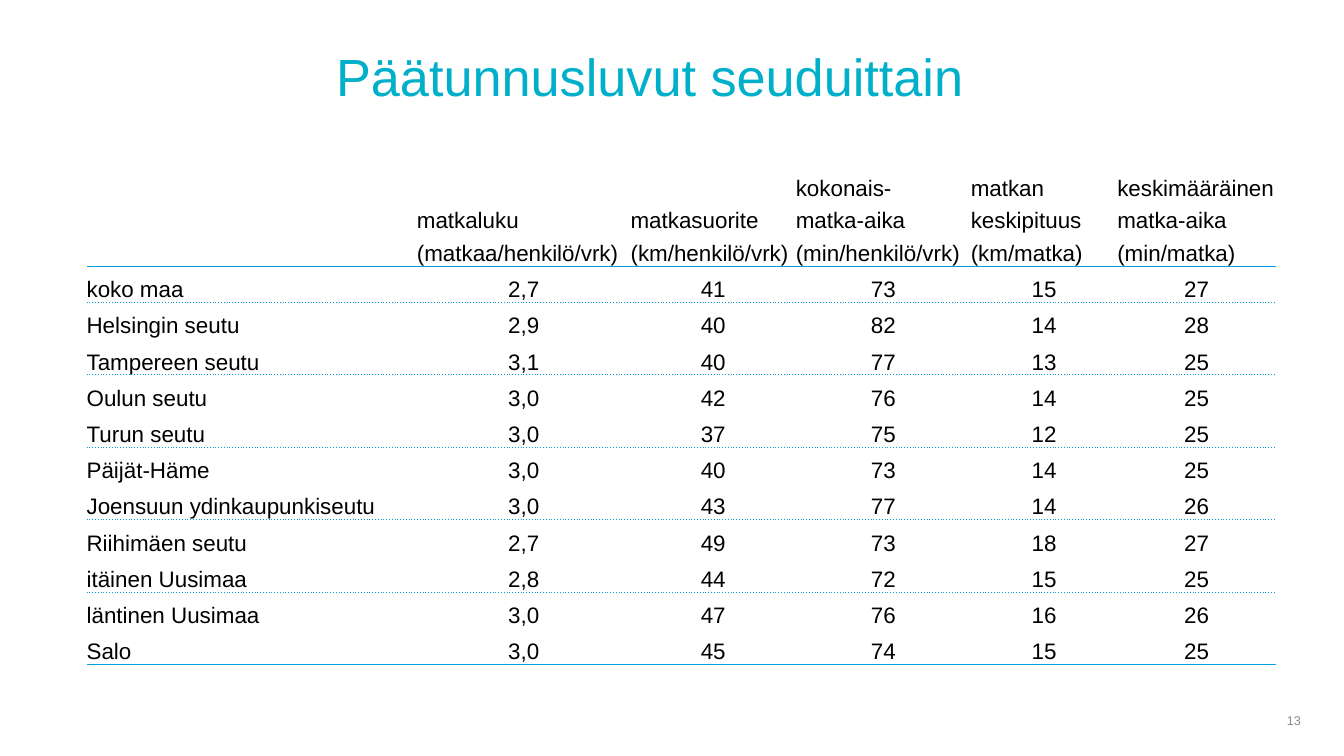
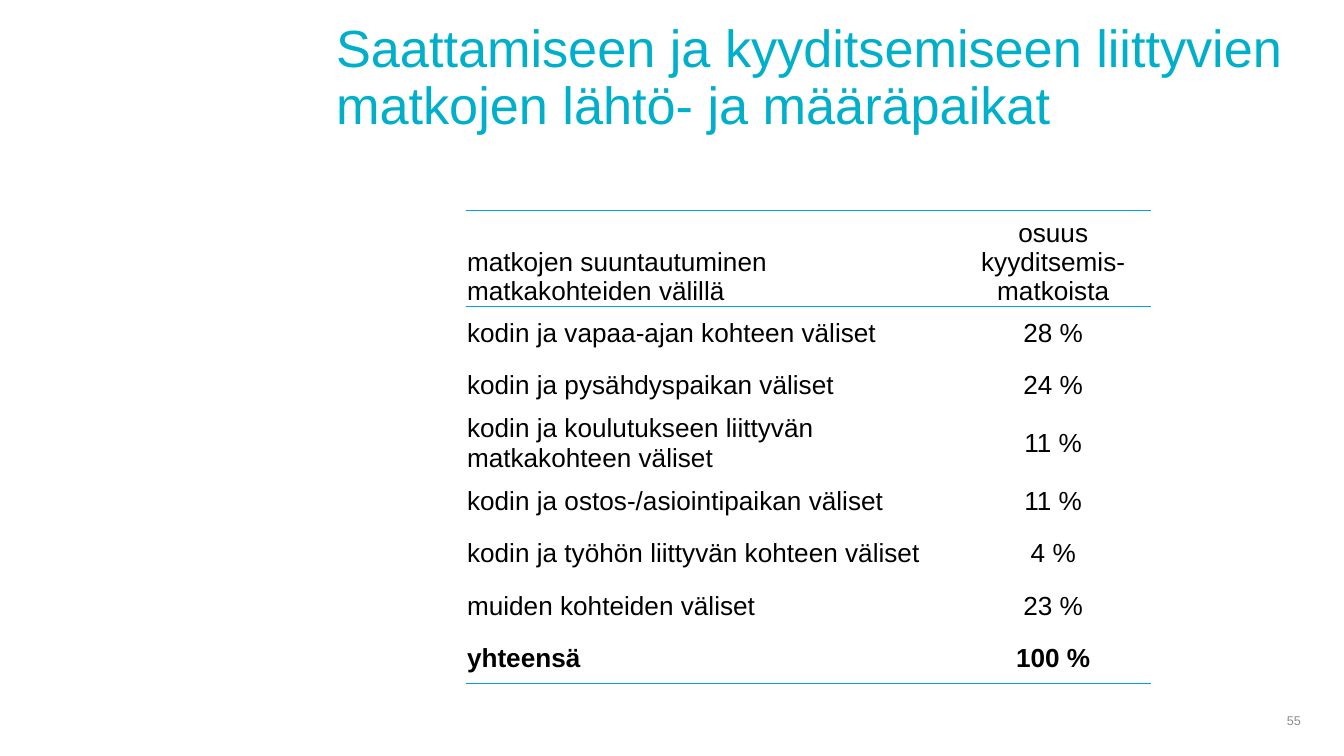
from dataclasses import dataclass

from lxml import etree
from pptx import Presentation
from pptx.dml.color import RGBColor
from pptx.enum.text import MSO_ANCHOR, PP_ALIGN
from pptx.oxml.ns import qn
from pptx.util import Pt

LEFT, MID, RIGHT = PP_ALIGN.LEFT, PP_ALIGN.CENTER, PP_ALIGN.RIGHT
CENTRE, BOTTOM = MSO_ANCHOR.MIDDLE, MSO_ANCHOR.BOTTOM
PLAIN_STYLE = "{2D5ABB26-0587-4C30-8999-92F81FD0307C}"
SOLID, DOT = "solid", "sysDot"


@dataclass(frozen=True)
class Theme:
    font: str = "Arial"
    title: str = "00B0CA"
    ink: str = "000000"
    grey: str = "8C8C8C"
    rule: str = "00A1E4"
    paper: str = "FFFFFF"
    title_size: float = 28
    page_size: float = 6.8
    region_size: float = 12
    share_size: float = 14
    rule_width: float = 0.5


THEME = Theme()

HEADS = [
    ["", "", "kokonais-", "matkan", "keskimääräinen"],
    ["matkaluku", "matkasuorite", "matka-aika", "keskipituus", "matka-aika"],
    ["(matkaa/henkilö/vrk)", "(km/henkilö/vrk)", "(min/henkilö/vrk)",
     "(km/matka)", "(min/matka)"],
]
REGIONS = [
    ["koko maa", "2,7", "41", "73", "15", "27"],
    ["Helsingin seutu", "2,9", "40", "82", "14", "28"],
    ["Tampereen seutu", "3,1", "40", "77", "13", "25"],
    ["Oulun seutu", "3,0", "42", "76", "14", "25"],
    ["Turun seutu", "3,0", "37", "75", "12", "25"],
    ["Päijät-Häme", "3,0", "40", "73", "14", "25"],
    ["Joensuun ydinkaupunkiseutu", "3,0", "43", "77", "14", "26"],
    ["Riihimäen seutu", "2,7", "49", "73", "18", "27"],
    ["itäinen Uusimaa", "2,8", "44", "72", "15", "25"],
    ["läntinen Uusimaa", "3,0", "47", "76", "16", "26"],
    ["Salo", "3,0", "45", "74", "15", "25"],
]
NAME_COLS = 5
SPANS = {"Joensuun ydinkaupunkiseutu": 5, "Salo": 1}
SHARES = [
    ["matkojen suuntautuminen matkakohteiden välillä",
     "osuus kyyditsemis-matkoista"],
    ["kodin ja vapaa-ajan kohteen väliset", "28 %"],
    ["kodin ja pysähdyspaikan väliset", "24 %"],
    ["kodin ja koulutukseen liittyvän matkakohteen väliset", "11 %"],
    ["kodin ja ostos-/asiointipaikan väliset", "11 %"],
    ["kodin ja työhön liittyvän kohteen väliset", "4 %"],
    ["muiden kohteiden väliset", "23 %"],
    ["yhteensä", "100 %"],
]


def write(frame, text, *, size, color=THEME.ink, align=LEFT, bold=False,
          spacing=None):
    para = frame.paragraphs[0]
    para.alignment = align
    if spacing:
        para.line_spacing = spacing
    if not text:
        # Keeps an empty cell from growing to the default type size.
        etree.SubElement(para._p, qn("a:endParaRPr"), sz=str(int(size * 100)))
        return
    run = para.add_run()
    run.text = text
    run.font.name = THEME.font
    run.font.size = Pt(size)
    run.font.bold = bold
    run.font.color.rgb = RGBColor.from_string(color)


def add_text(slide, text, box, **style):
    frame = slide.shapes.add_textbox(*map(Pt, box)).text_frame
    frame.word_wrap = True
    frame.vertical_anchor = CENTRE
    write(frame, text, **style)


def add_slide(deck, title, page):
    slide = deck.slides.add_slide(deck.slide_layouts[6])
    add_text(slide, title, (173, 24.5, 522, 36), size=THEME.title_size,
             color=THEME.title, spacing=0.9)
    add_text(slide, page, (674.5, 375, 29.5, 21.5), size=THEME.page_size,
             color=THEME.grey, align=RIGHT)
    return slide


def set_edge(cell, side, dash):
    props = cell._tc.get_or_add_tcPr()
    width = Pt(THEME.rule_width) if dash else 0
    line = etree.SubElement(props, qn("a:ln" + side), w=str(width))
    if not dash:
        etree.SubElement(line, qn("a:noFill"))
        return
    fill = etree.SubElement(line, qn("a:solidFill"))
    etree.SubElement(fill, qn("a:srgbClr"), val=THEME.rule)
    etree.SubElement(line, qn("a:prstDash"), val=dash)


def style_cell(cell, top, bottom, pad, anchor):
    cell.margin_left = cell.margin_right = cell.margin_top = Pt(pad)
    cell.margin_bottom = 0
    cell.vertical_anchor = anchor
    for side, dash in zip("LRTB", (None, None, top, bottom)):
        set_edge(cell, side, dash)
    cell.fill.solid()
    cell.fill.fore_color.rgb = RGBColor.from_string(THEME.paper)


def add_grid(slide, spot, cols, rows, edges, pad, anchors):
    """Add an empty table; edges holds the dash above each row and below the last."""
    shape = slide.shapes.add_table(len(rows), len(cols), *map(Pt, spot),
                                   Pt(sum(cols)), Pt(sum(rows)))
    table = shape.table
    table.first_row = table.horz_banding = False
    table._tbl.tblPr.find(qn("a:tableStyleId")).text = PLAIN_STYLE
    for col, width in zip(table.columns, cols):
        col.width = Pt(width)
    for index, height in enumerate(rows):
        table.rows[index].height = Pt(height)
        for cell in table.rows[index].cells:
            style_cell(cell, edges[index], edges[index + 1], pad,
                       anchors[index])
    return table


def add_regions(slide):
    cols = [32.5, 20, 66, 33, 25.5, 114.5, 88.5, 93.75, 78.5, 85]
    rows = [17.5] * len(HEADS) + [19.4] * len(REGIONS)
    edges = [None] * 3 + [SOLID] + [DOT, None] * 5 + [SOLID]
    table = add_grid(slide, (46.4, 90.2), cols, rows, edges, 0,
                     [BOTTOM] * len(rows))
    gap = [""] * (NAME_COLS - 1)
    lines = [["", *gap, *head] for head in HEADS]
    lines += [[name, *gap, *values] for name, *values in REGIONS]
    for row, line in enumerate(lines):
        body = row >= len(HEADS)
        for col, text in enumerate(line):
            align = MID if body and col >= NAME_COLS else LEFT
            write(table.cell(row, col).text_frame, text,
                  size=THEME.region_size, align=align)
        span = SPANS.get(line[0], 3) if body else 1
        if span > 1:
            table.cell(row, 0).merge(table.cell(row, span - 1))


def add_shares(slide):
    count = len(SHARES) - 1
    edges = [SOLID, SOLID] + [None] * (count - 1) + [SOLID]
    table = add_grid(slide, (249.5, 113), [262.5, 104.5],
                     [41] + [28] * count, edges, 0.7,
                     [BOTTOM] + [CENTRE] * count)
    for row, line in enumerate(SHARES):
        for col, text in enumerate(line):
            write(table.cell(row, col).text_frame, text,
                  size=THEME.share_size, align=MID if col else LEFT,
                  bold=row == count)


def main():
    deck = Presentation()
    deck.slide_width, deck.slide_height = Pt(720), Pt(405)
    add_regions(add_slide(deck, "Päätunnusluvut seuduittain", "13"))
    add_shares(add_slide(
        deck, "Saattamiseen ja kyyditsemiseen liittyvien "
        "matkojen lähtö- ja määräpaikat", "55"))
    deck.save("out.pptx")


if __name__ == "__main__":
    main()
